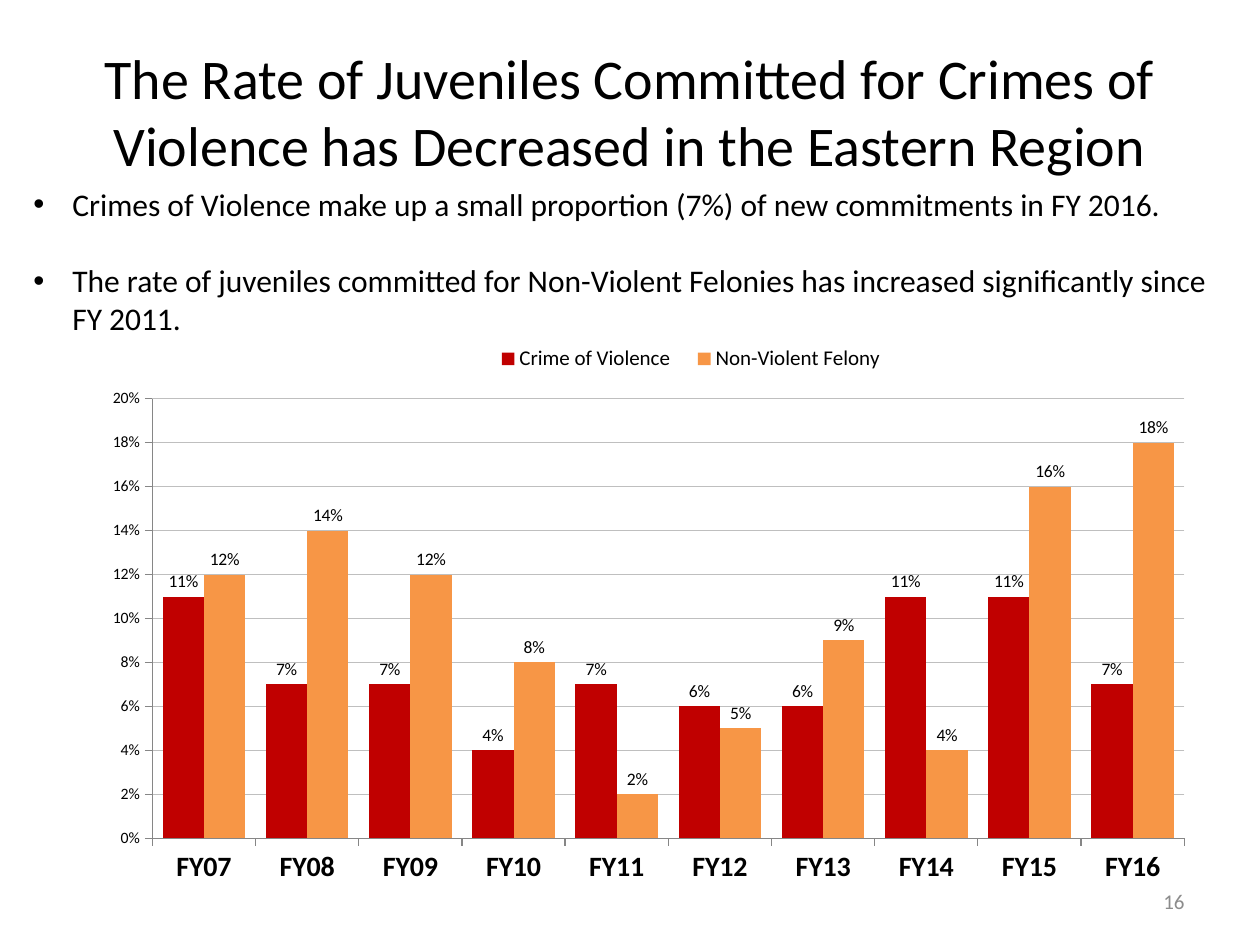
from dataclasses import dataclass

from lxml.etree import SubElement
from pptx import Presentation
from pptx.chart.data import CategoryChartData
from pptx.dml.color import RGBColor
from pptx.enum.chart import XL_CHART_TYPE, XL_LABEL_POSITION, XL_LEGEND_POSITION, XL_TICK_MARK
from pptx.enum.text import MSO_ANCHOR, PP_ALIGN
from pptx.oxml import parse_xml
from pptx.oxml.ns import nsdecls, qn
from pptx.util import Emu, Pt


@dataclass(frozen=True)
class Theme:
    font: str = "Calibri"
    ink: str = "000000"
    muted: str = "8C8C8C"
    axis: str = "868686"
    grid: str = "BFBFBF"
    violence: str = "C00000"
    felony: str = "F79646"
    title: int = 32
    body: int = 18
    category: int = 16
    small: int = 12
    label: int = 10
    tick: int = 9


theme = Theme()


def px(*lengths):
    return [Emu(round(length * 914400 / 126)) for length in lengths]


def style(font, size, color=theme.ink, bold=False):
    font.name = theme.font
    font.size = Pt(size)
    font.bold = bold
    font.color.rgb = RGBColor.from_string(color)


deck = Presentation()
deck.slide_width, deck.slide_height = px(1260, 945)
slide = deck.slides.add_slide(deck.slide_layouts[5])

title = slide.shapes.title
title.left, title.top, title.width, title.height = px(63, 32, 1134, 157)
title.text_frame.text = (
    "The Rate of Juveniles Committed for Crimes of Violence has Decreased in the Eastern Region"
)
title.text_frame.vertical_anchor = MSO_ANCHOR.MIDDLE
heading = title.text_frame.paragraphs[0]
heading.alignment = PP_ALIGN.CENTER
style(heading.font, theme.title)

page_number = slide.shapes.add_textbox(*px(903, 876, 294, 50)).text_frame
page_number.word_wrap = True
page_number.vertical_anchor = MSO_ANCHOR.MIDDLE
page_number.text = "16"
page_number.paragraphs[0].alignment = PP_ALIGN.RIGHT
style(page_number.paragraphs[0].font, theme.small, theme.muted)

findings = slide.shapes.add_textbox(*px(21, 179, 1207, 165)).text_frame
findings.word_wrap = True
findings.text = "\n".join([
    "Crimes of Violence make up a small proportion (7%) of new commitments in FY 2016.",
    "The rate of juveniles committed for Non-Violent Felonies has increased significantly since FY 2011.",
])
indent = px(39)[0]
for finding in findings.paragraphs:
    style(finding.font, theme.body)
    properties = finding._p.get_or_add_pPr()
    properties.set("marL", str(indent))
    properties.set("indent", str(-indent))
    bullet_font = parse_xml(f'<a:buFont {nsdecls("a")} typeface="Arial"/>')
    bullet = parse_xml(f'<a:buChar {nsdecls("a")} char="•"/>')
    properties.insert_element_before(bullet_font, "a:defRPr")
    properties.insert_element_before(bullet, "a:defRPr")
findings.paragraphs[1].space_before = Pt(22)

rates = CategoryChartData(number_format="0%")
rates.categories = [f"FY{year:02}" for year in range(7, 17)]
rates.add_series("Crime of Violence", [0.11, 0.07, 0.07, 0.04, 0.07, 0.06, 0.06, 0.11, 0.11, 0.07])
rates.add_series("Non-Violent Felony", [0.12, 0.14, 0.12, 0.08, 0.02, 0.05, 0.09, 0.04, 0.16, 0.18])
chart = slide.shapes.add_chart(
    XL_CHART_TYPE.COLUMN_CLUSTERED, *px(73, 336, 1134, 571), rates
).chart
style(chart.font, theme.label)
chart.has_title = False
chart.has_legend = True
chart.legend.position = XL_LEGEND_POSITION.TOP
chart.legend.include_in_layout = False
style(chart.legend.font, theme.small)

columns = chart.plots[0]
columns.gap_width = 50
columns.overlap = 0
columns.vary_by_categories = False
for offense, color in zip(columns.series, (theme.violence, theme.felony)):
    offense.format.fill.solid()
    offense.format.fill.fore_color.rgb = RGBColor.from_string(color)
    offense.invert_if_negative = False
    labels = offense.data_labels
    labels.show_value = True
    labels.number_format = "0%"
    labels.number_format_is_linked = False
    labels.position = XL_LABEL_POSITION.OUTSIDE_END
    style(labels.font, theme.label)

years, percent = chart.category_axis, chart.value_axis
style(years.tick_labels.font, theme.category, bold=True)
style(percent.tick_labels.font, theme.tick)
percent.tick_labels.number_format = "0%"
percent.tick_labels.number_format_is_linked = False
percent.minimum_scale, percent.maximum_scale, percent.major_unit = 0, 0.2, 0.02
percent.has_major_gridlines = True
for axis in (years, percent):
    axis.major_tick_mark = XL_TICK_MARK.OUTSIDE
    axis.minor_tick_mark = XL_TICK_MARK.NONE
    axis.format.line.color.rgb = RGBColor.from_string(theme.axis)
    axis.format.line.width = Pt(0.75)
gridline = percent.major_gridlines.format.line
gridline.color.rgb = RGBColor.from_string(theme.grid)
gridline.width = Pt(0.75)

plot_area = chart._chartSpace.chart.plotArea
for old_layout in plot_area.findall(qn("c:layout")):
    plot_area.remove(old_layout)
plot_layout = parse_xml(f'<c:layout {nsdecls("c")}/>')
plot_area.insert(0, plot_layout)
legend_element = chart.legend._element
for old_layout in legend_element.findall(qn("c:layout")):
    legend_element.remove(old_layout)
legend_layout = parse_xml(f'<c:layout {nsdecls("c")}/>')
legend_element.find(qn("c:legendPos")).addnext(legend_layout)

plot_settings = [("layoutTarget", "inner")]
edges = [("xMode", "edge"), ("yMode", "edge")]
plot_box = [("x", 0.07), ("y", 0.11), ("w", 0.91), ("h", 0.77)]
legend_box = [("x", 0.36), ("y", 0.01), ("w", 0.37), ("h", 0.06)]
for layout, settings in (
    (plot_layout, plot_settings + edges + plot_box),
    (legend_layout, edges + legend_box),
):
    manual = SubElement(layout, qn("c:manualLayout"))
    for tag, value in settings:
        SubElement(manual, qn(f"c:{tag}")).set("val", str(value))

deck.save("out.pptx")
